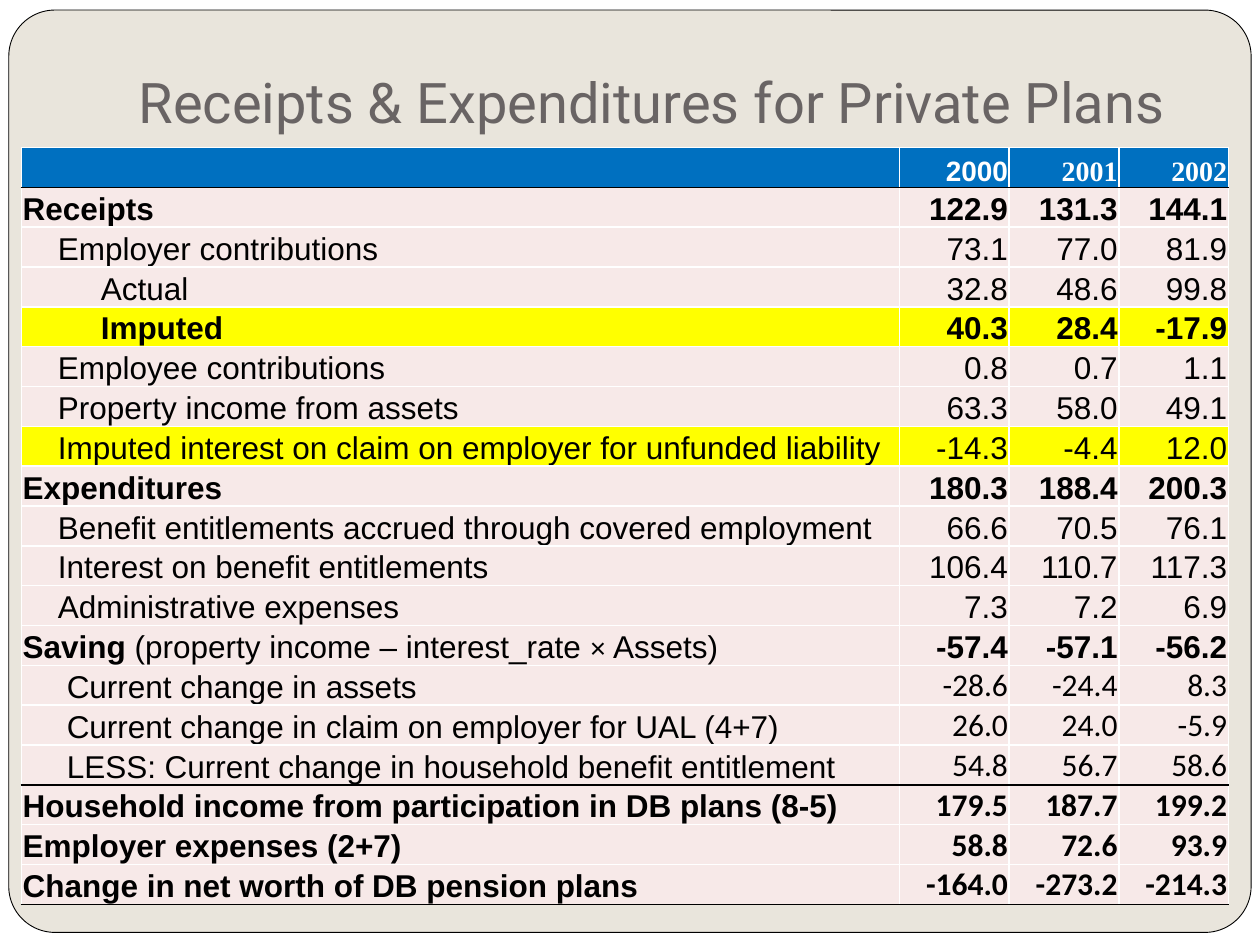
import pptx
import pptx.dml.color
import pptx.enum.shapes
import pptx.enum.text
import pptx.oxml
import pptx.oxml.ns
import pptx.util

Inches = pptx.util.Inches
Pt = pptx.util.Pt
ALIGN = pptx.enum.text.PP_ALIGN
ANCHOR = pptx.enum.text.MSO_ANCHOR
SHAPE = pptx.enum.shapes.MSO_SHAPE

COLORS = {
    "white": "FFFFFF",
    "black": "000000",
    "panel": "E9E5DC",
    "title": "696464",
    "header": "0070C0",
    "row": "F7E9E8",
    "highlight": "FFFF00",
}

YEARS = ["2000", "2001", "2002"]
COLUMN_WIDTHS = [6.97, 0.87, 0.87, 0.87]
TABLE_HEIGHT = 6.01

# Label, left indent in inches, values, style flags:
# b = bold, h = highlighted, c = values in Calibri, u = black rule below
ROWS = [
    ("Receipts", 0, "122.9 131.3 144.1", "b"),
    ("Employer contributions", 0.28, "73.1 77.0 81.9", ""),
    ("Actual", 0.62, "32.8 48.6 99.8", ""),
    ("Imputed", 0.62, "40.3 28.4 -17.9", "bh"),
    ("Employee contributions", 0.28, "0.8 0.7 1.1", ""),
    ("Property income from assets", 0.28, "63.3 58.0 49.1", ""),
    ("Imputed interest on claim on employer for unfunded liability", 0.28,
     "-14.3 -4.4 12.0", "h"),
    ("Expenditures", 0, "180.3 188.4 200.3", "b"),
    ("Benefit entitlements accrued through covered employment", 0.28,
     "66.6 70.5 76.1", ""),
    ("Interest on benefit entitlements", 0.28, "106.4 110.7 117.3", ""),
    ("Administrative expenses", 0.28, "7.3 7.2 6.9", ""),
    ("Saving ", 0, "-57.4 -57.1 -56.2", "b"),
    ("Current change in assets", 0.35, "-28.6 -24.4 8.3", "c"),
    ("Current change in claim on employer for UAL (4+7)", 0.35,
     "26.0 24.0 -5.9", "c"),
    ("LESS: Current change in household benefit entitlement", 0.35,
     "54.8 56.7 58.6", "cu"),
    ("Household income from participation in DB plans (8-5)", 0,
     "179.5 187.7 199.2", "bc"),
    ("Employer expenses (2+7)", 0, "58.8 72.6 93.9", "bc"),
    ("Change in net worth of DB pension plans", 0,
     "-164.0 -273.2 -214.3", "bcu"),
]
SAVING_FORMULA = [("(property income – interest_rate ", 18), ("×", 16), (" Assets)", 18)]


def rgb(name):
    return pptx.dml.color.RGBColor.from_string(COLORS[name])


def style_span(span, size, font="Arial", color="black", bold=False):
    span.font.size = Pt(size)
    span.font.name = font
    span.font.bold = bold
    span.font.color.rgb = rgb(color)


def add_panel(page, kind, left, top, width, height, fill):
    """Add a backdrop shape behind the title."""
    panel = page.shapes.add_shape(
        kind, Inches(left), Inches(top), Inches(width), Inches(height))
    panel.shadow.inherit = False
    panel.fill.solid()
    panel.fill.fore_color.rgb = rgb(fill)
    panel.line.fill.background()
    page.shapes.title.element.addprevious(panel.element)
    return panel


def set_title(page, text):
    title = page.shapes.title
    title.left, title.top = Inches(1), Inches(0.3)
    title.width, title.height = Inches(8.5), Inches(0.87)
    frame = title.text_frame
    frame.text = text
    frame.word_wrap = True
    frame.auto_size = pptx.enum.text.MSO_AUTO_SIZE.NONE
    frame.vertical_anchor = ANCHOR.BOTTOM
    frame.margin_left = frame.margin_right = frame.margin_bottom = Inches(0.1)
    frame.margin_top = Inches(0.05)
    para = frame.paragraphs[0]
    para.alignment = ALIGN.LEFT
    style_span(para.runs[0], 32, "Roboto", "title")


def set_borders(cell, top, bottom):
    """Borders precede the fill in the cell properties."""
    sides = {"lnL": "white", "lnR": "white", "lnT": top, "lnB": bottom}
    for position, (side, color) in enumerate(sides.items()):
        border = pptx.oxml.parse_xml(
            f'<a:{side} {pptx.oxml.ns.nsdecls("a")} w="12700"><a:solidFill>'
            f'<a:srgbClr val="{COLORS[color]}"/></a:solidFill></a:{side}>')
        cell._tc.get_or_add_tcPr().insert(position, border)


def format_cell(cell, fill, top="white", bottom="white"):
    cell.margin_left = cell.margin_right = cell.margin_top = Inches(0.01)
    cell.margin_bottom = 0
    cell.vertical_anchor = ANCHOR.BOTTOM
    cell.fill.solid()
    cell.fill.fore_color.rgb = rgb(fill)
    set_borders(cell, top, bottom)


def write_cell(cell, text, align, size=18, **style):
    cell.text_frame.text = text
    para = cell.text_frame.paragraphs[0]
    para.alignment = align
    style_span(para.runs[0], size, **style)
    return para


def add_plan_table(page):
    frame = page.shapes.add_table(
        len(ROWS) + 1, len(COLUMN_WIDTHS), Inches(0.17), Inches(1.17),
        Inches(sum(COLUMN_WIDTHS)), Inches(TABLE_HEIGHT))
    table = frame.table
    for column, width in zip(table.columns, COLUMN_WIDTHS):
        column.width = Inches(width)
    for row in table.rows:
        row.height = Inches(TABLE_HEIGHT / len(table.rows))

    # Header row
    for cell in table.rows[0].cells:
        format_cell(cell, "header", bottom="black")
    for column, year in enumerate(YEARS, 1):
        font = "Arial" if column == 1 else "Times New Roman"
        write_cell(table.cell(0, column), year, ALIGN.RIGHT, 16,
                   font=font, color="white", bold=True)

    # Data rows
    top = "black"
    for index, (label, indent, values, flags) in enumerate(ROWS, 1):
        bold = "b" in flags
        fill = "highlight" if "h" in flags else "row"
        bottom = "black" if "u" in flags else "white"
        for cell in table.rows[index].cells:
            format_cell(cell, fill, top, bottom)
        para = write_cell(table.cell(index, 0), label, ALIGN.LEFT, bold=bold)
        if indent:
            para._p.get_or_add_pPr().set("marL", str(Inches(indent)))
        if label == "Saving ":
            for text, size in SAVING_FORMULA:
                span = para.add_run()
                span.text = text
                style_span(span, size)
        font = "Calibri" if "c" in flags else "Arial"
        for column, value in enumerate(values.split(), 1):
            write_cell(table.cell(index, column), value, ALIGN.RIGHT,
                       font=font, bold=bold)
        top = bottom


def main():
    deck = pptx.Presentation()
    deck.slide_width, deck.slide_height = Inches(10), Inches(7.5)
    page = deck.slides.add_slide(deck.slide_layouts[5])

    # Backdrop
    page.background.fill.solid()
    page.background.fill.fore_color.rgb = rgb("panel")
    add_panel(page, SHAPE.RECTANGLE, 0, 0, 10, 7.5, "white")
    panel = add_panel(page, SHAPE.ROUNDED_RECTANGLE, 0.07, 0.08, 9.86, 7.32, "panel")
    panel.adjustments[0] = 0.05
    panel.line.color.rgb = rgb("black")
    panel.line.width = Pt(0.5)

    # Content
    set_title(page, "Receipts & Expenditures for Private Plans")
    add_plan_table(page)
    deck.save("out.pptx")


if __name__ == "__main__":
    main()
